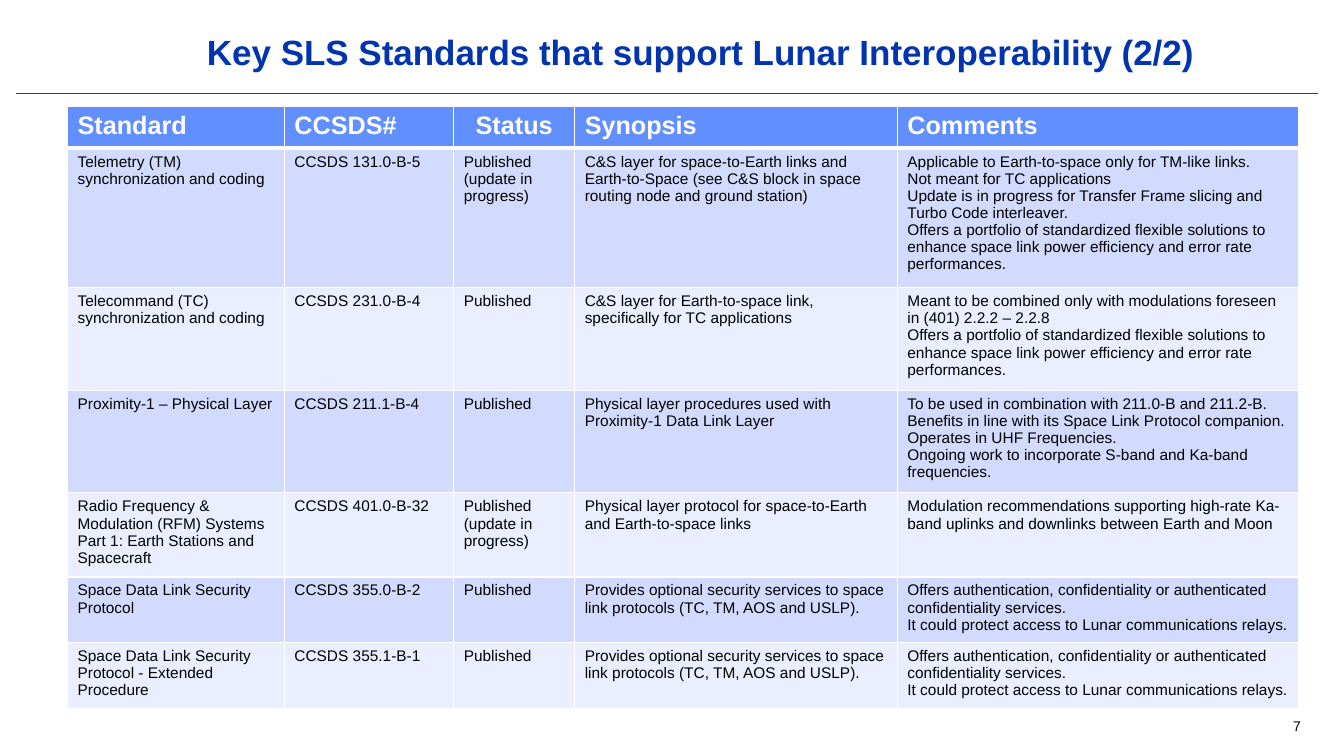
import pptx
import pptx.util
import pptx.dml.color
import pptx.enum.shapes
import pptx.enum.text
import pptx.oxml.ns
from lxml import etree

Inches = pptx.util.Inches
Align = pptx.enum.text.PP_ALIGN
Anchor = pptx.enum.text.MSO_ANCHOR

# Content: each cell is one string, or a tuple of paragraphs
TITLE = "Key SLS Standards that support Lunar Interoperability (2/2)"
PAGE_NUMBER = "7"
HEADINGS = ("Standard", "CCSDS#", "Status", "Synopsis", "Comments")
PORTFOLIO = ("Offers a portfolio of standardized flexible solutions to enhance "
             "space link power efficiency and error rate performances.")
SECURITY = "Provides optional security services to space link protocols (TC, TM, AOS and USLP)."
SECURITY_COMMENTS = (
    "Offers authentication, confidentiality or authenticated confidentiality services.",
    "It could protect access to Lunar communications relays.")
STANDARDS = [
    ("Telemetry (TM) synchronization and coding", "CCSDS 131.0-B-5",
     ("Published", "(update in progress)"),
     "C&S layer for space-to-Earth links and Earth-to-Space "
     "(see C&S block in space routing node and ground station)",
     ("Applicable to Earth-to-space only for TM-like links.",
      "Not meant for TC applications",
      "Update is in progress for Transfer Frame slicing and Turbo Code interleaver.",
      PORTFOLIO)),
    ("Telecommand (TC) synchronization and coding", "CCSDS 231.0-B-4", "Published",
     "C&S layer for Earth-to-space link, specifically for TC applications",
     ("Meant to be combined only with modulations foreseen in (401) 2.2.2 – 2.2.8",
      PORTFOLIO)),
    ("Proximity-1 – Physical Layer", "CCSDS 211.1-B-4", "Published",
     "Physical layer procedures used with Proximity-1 Data Link Layer",
     ("To be used in combination with 211.0-B and 211.2-B.",
      "Benefits in line with its Space Link Protocol companion.",
      "Operates in UHF Frequencies.",
      "Ongoing work to incorporate S-band and Ka-band frequencies.")),
    ("Radio Frequency & Modulation (RFM) Systems Part 1: Earth Stations and Spacecraft",
     "CCSDS 401.0-B-32", "Published (update in progress)",
     "Physical layer protocol for space-to-Earth and Earth-to-space links",
     "Modulation recommendations supporting high-rate Ka-band uplinks and "
     "downlinks between Earth and Moon"),
    ("Space Data Link Security Protocol", "CCSDS 355.0-B-2", "Published",
     SECURITY, SECURITY_COMMENTS),
    ("Space Data Link Security Protocol - Extended Procedure", "CCSDS 355.1-B-1",
     "Published", SECURITY, SECURITY_COMMENTS),
]

# Formats and measures
TITLE_FONT = {"name": "Arial", "size": pptx.util.Pt(25), "bold": True}
HEADING_FONT = {"name": "Arial", "size": pptx.util.Pt(18), "bold": True}
BODY_FONT = {"name": "Arial", "size": pptx.util.Pt(11), "bold": False}
NUMBER_FONT = {"name": "Arial", "size": pptx.util.Pt(10), "bold": False}
HEADING_FILL, BAND_FILLS = "618FFD", ("D2DBFE", "EAEEFF")
COLUMN_WIDTHS = (2.15, 1.68, 1.2, 3.2, 3.98)
ROW_HEIGHTS = (0.41, 1.29, 0.95, 0.95, 0.78, 0.61, 0.61)


def color(value):
    return pptx.dml.color.RGBColor.from_string(value)


def write(frame, content, font, text_color, alignment=Align.LEFT):
    lines = (content,) if isinstance(content, str) else content
    for index, line in enumerate(lines):
        paragraph = frame.add_paragraph() if index else frame.paragraphs[0]
        paragraph.text = line
        paragraph.alignment = alignment
        for name, value in font.items():
            setattr(paragraph.font, name, value)
        paragraph.font.color.rgb = color(text_color)


def set_borders(cell, widths):
    properties = cell._tc.get_or_add_tcPr()
    for index, (side, points) in enumerate(widths.items()):
        line = etree.Element(pptx.oxml.ns.qn(f"a:{side}"), w=str(pptx.util.Pt(points)))
        fill = etree.SubElement(line, pptx.oxml.ns.qn("a:solidFill"))
        etree.SubElement(fill, pptx.oxml.ns.qn("a:srgbClr"), val="FFFFFF")
        properties.insert(index, line)


def add_standards_table(slide):
    rows = [HEADINGS] + STANDARDS
    frame = slide.shapes.add_table(
        len(rows), len(HEADINGS), Inches(0.67), Inches(1.06),
        Inches(sum(COLUMN_WIDTHS)), Inches(sum(ROW_HEIGHTS)))
    table = frame.table
    for column, width in zip(table.columns, COLUMN_WIDTHS):
        column.width = Inches(width)
    for row, height in zip(table.rows, ROW_HEIGHTS):
        row.height = Inches(height)
    for row_index, row in enumerate(rows):
        heading = row_index == 0
        for column_index, content in enumerate(row):
            cell = table.cell(row_index, column_index)
            cell.fill.solid()
            cell.fill.fore_color.rgb = color(
                HEADING_FILL if heading else BAND_FILLS[(row_index - 1) % 2])
            set_borders(cell, {"lnL": 1, "lnR": 1, "lnT": 3 if row_index == 1 else 1,
                               "lnB": 3 if heading else 1})
            centered = heading and content == "Status"
            write(cell.text_frame, content, HEADING_FONT if heading else BODY_FONT,
                  "FFFFFF" if heading else "000000",
                  Align.CENTER if centered else Align.LEFT)


def main():
    presentation = pptx.Presentation()
    presentation.slide_width = Inches(13.33)
    presentation.slide_height = Inches(7.5)
    slide = presentation.slides.add_slide(presentation.slide_layouts[5])

    # Rule under the title
    rule = slide.shapes.add_connector(
        pptx.enum.shapes.MSO_CONNECTOR.STRAIGHT,
        Inches(0.16), Inches(0.92), Inches(13.07), Inches(0.92))
    rule.line.color.rgb = color("333399")
    rule.line.width = pptx.util.Pt(0.13)
    etree.SubElement(rule._element.spPr, pptx.oxml.ns.qn("a:effectLst"))

    # Title
    title = slide.shapes.title
    title.left, title.top, title.width, title.height = map(Inches, (1.22, 0.3, 11.45, 0.62))
    title.text_frame.vertical_anchor = Anchor.TOP
    write(title.text_frame, TITLE, TITLE_FONT, "0234AD", Align.CENTER)
    title.text_frame.paragraphs[0].line_spacing = 0.9

    # Page number
    number = slide.shapes.add_textbox(*map(Inches, (9.89, 7.08, 3.11, 0.25)))
    number.text_frame.word_wrap = True
    number.text_frame.vertical_anchor = Anchor.MIDDLE
    write(number.text_frame, PAGE_NUMBER, NUMBER_FONT, "000000", Align.RIGHT)

    add_standards_table(slide)
    presentation.save("out.pptx")


if __name__ == "__main__":
    main()
